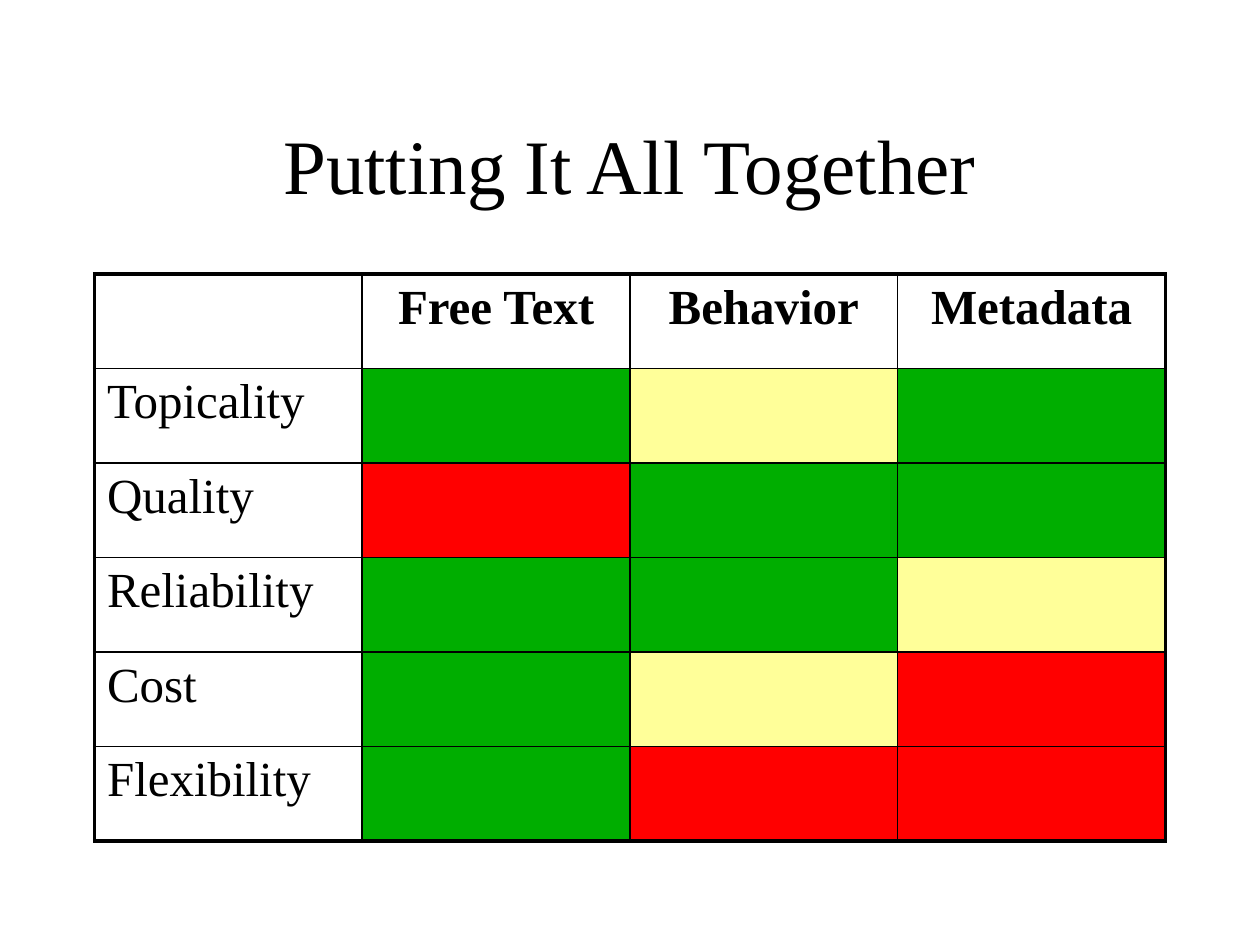
import pptx
import pptx.util
import pptx.dml.color
import pptx.enum.text
import lxml.etree
import pptx.oxml.ns

Align = pptx.enum.text.PP_ALIGN
GREEN, YELLOW, RED, BLACK = "00AE00", "FFFF99", "FF0000", "000000"


def color(value):
    return pptx.dml.color.RGBColor.from_string(value)


def write(text_frame, text, alignment, formats):
    paragraph = text_frame.paragraphs[0]
    paragraph.alignment = alignment
    run = paragraph.add_run()
    run.text = text
    run.font.color.rgb = color(BLACK)
    for name, value in formats.items():
        setattr(run.font, name, value)


presentation = pptx.Presentation()
presentation.slide_width = pptx.util.Inches(10)
presentation.slide_height = pptx.util.Inches(7.5)
width, height = presentation.slide_width, presentation.slide_height
slide = presentation.slides.add_slide(presentation.slide_layouts[6])

left, table_width = int(width * 0.075), int(width * 0.85)
title = slide.shapes.add_textbox(left, int(height * 0.09), table_width, int(height / 6))
title.text_frame.word_wrap = True
title.text_frame.vertical_anchor = pptx.enum.text.MSO_ANCHOR.MIDDLE
title_format = {"name": "Times New Roman", "size": pptx.util.Pt(44)}
write(title.text_frame, "Putting It All Together", Align.CENTER, title_format)

headings = ["", "Free Text", "Behavior", "Metadata"]
ratings = {
    "Topicality": [GREEN, YELLOW, GREEN],
    "Quality": [RED, GREEN, GREEN],
    "Reliability": [GREEN, GREEN, YELLOW],
    "Cost": [GREEN, YELLOW, RED],
    "Flexibility": [GREEN, RED, RED],
}
rows, columns = len(ratings) + 1, len(headings)
table = slide.shapes.add_table(
    rows, columns, left, int(height * 0.29), table_width, int(height * 0.6)
).table
for name, value in {"first_row": False, "horz_banding": False}.items():
    setattr(table, name, value)

cell_format = {"name": "Times New Roman", "size": pptx.util.Pt(28)}
for column, heading in enumerate(headings[1:], 1):
    write(table.cell(0, column).text_frame, heading, Align.CENTER, {**cell_format, "bold": True})

for row, (criterion, fills) in enumerate(ratings.items(), 1):
    write(table.cell(row, 0).text_frame, criterion, Align.LEFT, cell_format)
    for column, fill in enumerate(fills, 1):
        cell = table.cell(row, column)
        cell.fill.solid()
        cell.fill.fore_color.rgb = color(fill)

qn = pptx.oxml.ns.qn
for row in range(rows):
    for column in range(columns):
        cell = table.cell(row, column)
        if row == 0 or column == 0:
            cell.fill.background()
        properties = cell._tc.get_or_add_tcPr()
        outer_sides = {
            "a:lnL": column == 0,
            "a:lnR": column == columns - 1,
            "a:lnT": row == 0,
            "a:lnB": row == rows - 1,
        }
        for position, (side, outer) in enumerate(outer_sides.items()):
            line = lxml.etree.Element(qn(side), w=str(pptx.util.Pt(2.25 if outer else 1)))
            solid = lxml.etree.SubElement(line, qn("a:solidFill"))
            lxml.etree.SubElement(solid, qn("a:srgbClr"), val=BLACK)
            properties.insert(position, line)

presentation.save("out.pptx")
